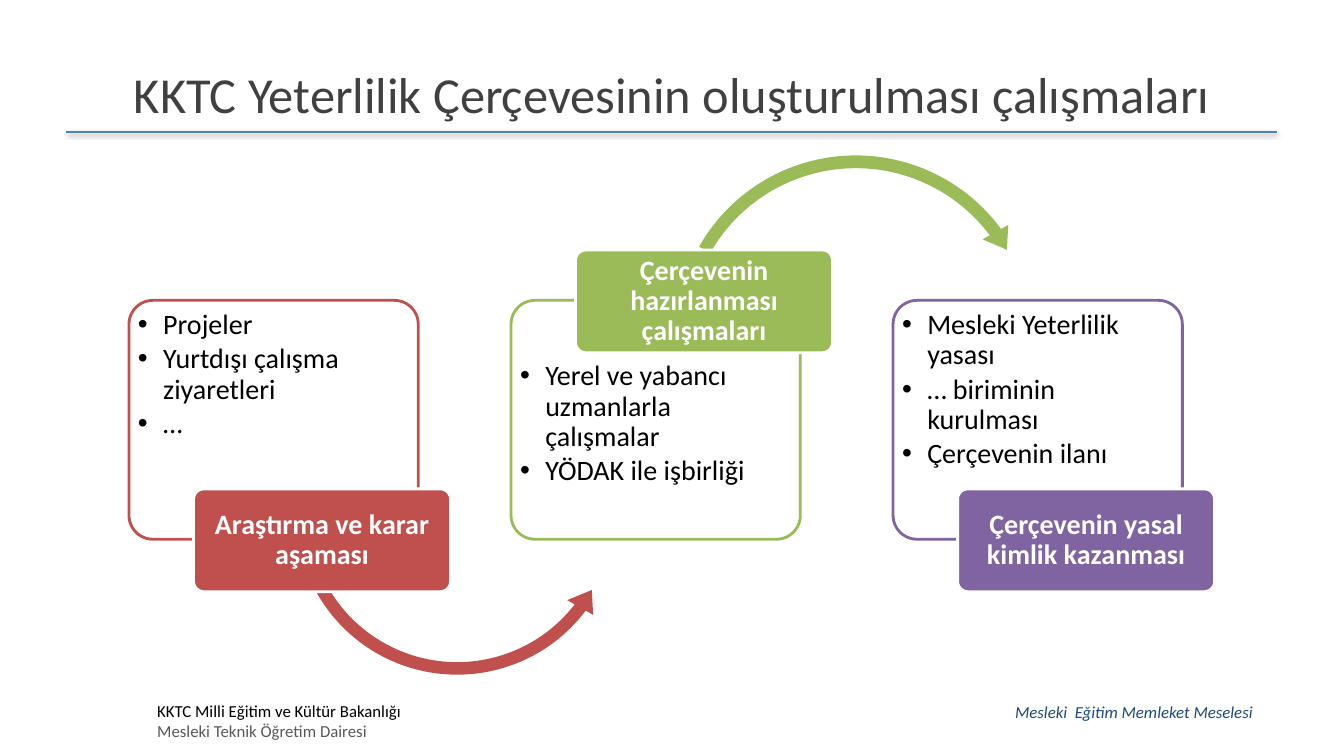
from dataclasses import dataclass
from typing import Optional

from lxml.etree import SubElement
from pptx import Presentation
from pptx.dml.color import RGBColor
from pptx.enum.shapes import MSO_CONNECTOR, MSO_SHAPE
from pptx.enum.text import MSO_ANCHOR, PP_ALIGN
from pptx.oxml.ns import qn
from pptx.util import Emu, Inches, Pt


@dataclass(frozen=True)
class Theme:
    font: str = "Calibri"
    title: str = "404040"
    rule: str = "4F81BD"
    motto: str = "1F497D"
    muted: str = "595959"
    black: str = "000000"
    white: str = "FFFFFF"
    red: str = "C0504D"
    green: str = "9BBB59"
    purple: str = "8064A2"
    title_size: int = 36
    body_size: int = 20
    footer_size: int = 12
    line: int = 2


@dataclass(frozen=True)
class Box:
    """Left, top, width and height in grid columns and rows."""
    col: float
    row: float
    cols: float
    rows: float


@dataclass(frozen=True)
class Arrow:
    kind: MSO_SHAPE
    box: Box
    adjustments: tuple[float, ...]


@dataclass(frozen=True)
class Stage:
    label: str
    points: tuple[str, ...]
    color: str
    label_on_top: bool = False
    arrow: Optional[Arrow] = None


T = Theme()

# Slide and its grid of 160 columns by 90 rows
prs = Presentation()
prs.slide_width, prs.slide_height = Inches(13.33), Inches(7.5)
s = prs.slides.add_slide(prs.slide_layouts[6])
COLUMNS, ROWS = 160, 90

# Placement of the three stages
FIRST_COL, PITCH = 15.36, 45.48
CARD_ROW, CARD_COLS, CARD_ROWS = 35.76, 34.44, 28.44
LABEL_SHIFT, LABEL_COLS, LABEL_ROWS = 7.68, 30.6, 12.24
LABEL_TOP_ROW, LABEL_BOTTOM_ROW = 29.76, 58.2

STAGES = (
    Stage("Araştırma ve karar aşaması",
          ("Projeler", "Yurtdışı çalışma ziyaretleri", "…"), T.red,
          arrow=Arrow(MSO_SHAPE.LEFT_CIRCULAR_ARROW, Box(34.2, 40.92, 40.44, 40.44),
                      (0.037, 4.669, 22.424, 90.245, 0.044))),
    Stage("Çerçevenin hazırlanması çalışmaları",
          ("Yerel ve yabancı uzmanlarla çalışmalar", "YÖDAK ile işbirliği"), T.green,
          label_on_top=True,
          arrow=Arrow(MSO_SHAPE.CIRCULAR_ARROW, Box(79.44, 17.52, 44.88, 44.88),
                      (0.034, 4.173, 194.072, 125.755, 0.039))),
    Stage("Çerçevenin yasal kimlik kazanması",
          ("Mesleki Yeterlilik yasası", "… biriminin kurulması", "Çerçevenin ilanı"),
          T.purple),
)


def x(cols: float) -> Emu:
    return Emu(round(prs.slide_width * cols / COLUMNS))


def y(rows: float) -> Emu:
    return Emu(round(prs.slide_height * rows / ROWS))


def place(box: Box) -> tuple[Emu, Emu, Emu, Emu]:
    return x(box.col), y(box.row), x(box.cols), y(box.rows)


def rgb(color: str) -> RGBColor:
    return RGBColor.from_string(color)


def set_frame(tf, anchor=MSO_ANCHOR.TOP, insets: tuple = (1.2, 0.6, 1.2, 0.6)) -> None:
    tf.word_wrap = True
    tf.vertical_anchor = anchor
    left, top, right, bottom = insets
    tf.margin_left, tf.margin_right = x(left), x(right)
    tf.margin_top, tf.margin_bottom = y(top), y(bottom)


def write(tf, text: str, *, size: int, color: str, bold: bool = False,
          italic: bool = False, align=PP_ALIGN.LEFT, spacing: float = 1.0,
          after: float = 0, bullet: bool = False) -> None:
    """Append one paragraph, filling the empty first one if there is one."""
    p = tf.paragraphs[0] if not tf.text else tf.add_paragraph()
    if bullet:
        pPr = p._p.get_or_add_pPr()
        pPr.set("marL", str(x(3)))
        pPr.set("indent", str(-x(3)))
        SubElement(pPr, qn("a:buFont")).set("typeface", "Arial")
        SubElement(pPr, qn("a:buChar")).set("char", "•")
    p.alignment, p.line_spacing, p.space_after = align, spacing, Pt(after)
    r = p.add_run()
    r.text = text
    r.font.name, r.font.size = T.font, Pt(size)
    r.font.bold, r.font.italic = bold, italic
    r.font.color.rgb = rgb(color)


def add_text_box(box: Box, anchor=MSO_ANCHOR.TOP):
    tf = s.shapes.add_textbox(*place(box)).text_frame
    set_frame(tf, anchor)
    return tf


def add_solid(kind: MSO_SHAPE, box: Box, adjustments: tuple[float, ...], fill: str,
              line: Optional[str] = None):
    sp = s.shapes.add_shape(kind, *place(box))
    sp.shadow.inherit = False
    for i, value in enumerate(adjustments):
        sp.adjustments[i] = value
    sp.fill.solid()
    sp.fill.fore_color.rgb = rgb(fill)
    if line:
        sp.line.color.rgb, sp.line.width = rgb(line), Pt(T.line)
    else:
        sp.line.fill.background()
    return sp


def add_rule() -> None:
    rule = s.shapes.add_connector(MSO_CONNECTOR.STRAIGHT, x(7.92), y(15.72), x(152), y(15.72))
    rule.line.color.rgb, rule.line.width = rgb(T.rule), Pt(T.line)
    effects = SubElement(rule._element.spPr, qn("a:effectLst"))
    shadow = SubElement(effects, qn("a:outerShdw"), blurRad=str(Pt(3.1)),
                        dist=str(Pt(1.6)), dir="5400000", rotWithShape="0")
    tint = SubElement(shadow, qn("a:srgbClr"), val=T.black)
    SubElement(tint, qn("a:alpha"), val="38000")


def add_stage(index: int, stage: Stage) -> None:
    col = FIRST_COL + index * PITCH

    # Outlined card with its points
    card = add_solid(MSO_SHAPE.ROUNDED_RECTANGLE, Box(col, CARD_ROW, CARD_COLS, CARD_ROWS),
                     (0.1,), T.white, stage.color)
    tint = card._element.spPr.find(qn("a:solidFill")).find(qn("a:srgbClr"))
    SubElement(tint, qn("a:alpha"), val="90000")
    set_frame(card.text_frame, insets=(0.24, 6.48 if stage.label_on_top else 0.36, 0.36, 0.36))
    for point in stage.points:
        write(card.text_frame, point, size=T.body_size, color=T.black,
              spacing=0.9, after=3, bullet=True)

    # Curved arrow to the next stage
    if stage.arrow:
        add_solid(stage.arrow.kind, stage.arrow.box, stage.arrow.adjustments, stage.color)

    # Stage label
    row = LABEL_TOP_ROW if stage.label_on_top else LABEL_BOTTOM_ROW
    label = add_solid(MSO_SHAPE.ROUNDED_RECTANGLE,
                      Box(col + LABEL_SHIFT, row, LABEL_COLS, LABEL_ROWS),
                      (0.1,), stage.color, T.white)
    set_frame(label.text_frame, MSO_ANCHOR.MIDDLE, (0.48, 0.36, 0.48, 0.36))
    write(label.text_frame, stage.label, size=T.body_size, color=T.white, bold=True,
          align=PP_ALIGN.CENTER, spacing=0.9)


# Title and rule
add_rule()
write(add_text_box(Box(8, 3.6, 144, 15), MSO_ANCHOR.MIDDLE),
      "KKTC Yeterlilik Çerçevesinin oluşturulması çalışmaları",
      size=T.title_size, color=T.title, align=PP_ALIGN.CENTER)

# Footer
write(add_text_box(Box(119.64, 82.92, 33, 3.6)), "Mesleki  Eğitim Memleket Meselesi",
      size=T.footer_size, color=T.motto, italic=True)
office = add_text_box(Box(17.52, 82.8, 45.48, 6))
write(office, "KKTC Milli Eğitim ve Kültür Bakanlığı", size=T.footer_size, color=T.black)
write(office, "Mesleki Teknik Öğretim Dairesi", size=T.footer_size, color=T.muted)

# Stages
for index, stage in enumerate(STAGES):
    add_stage(index, stage)

prs.save("out.pptx")
